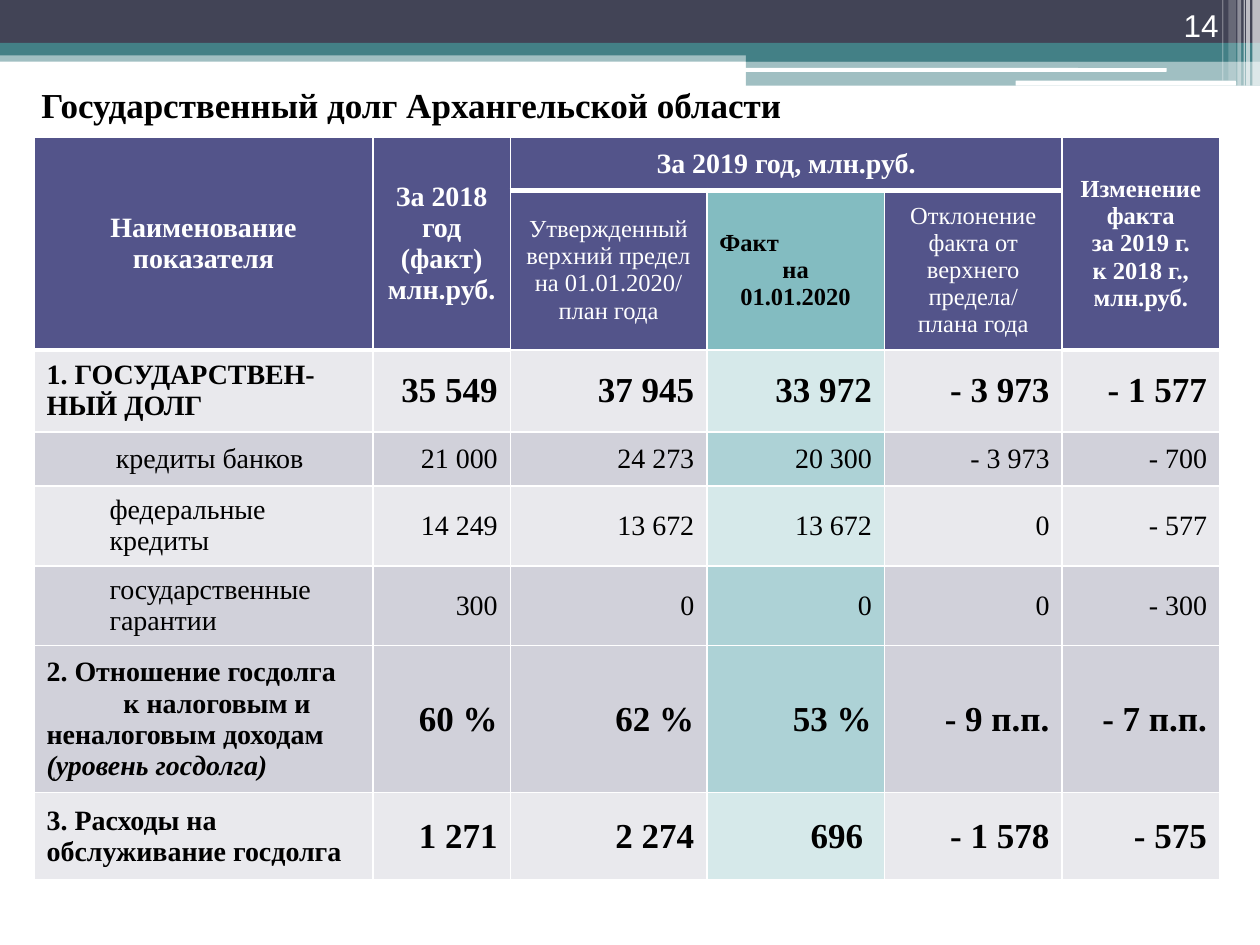
from lxml import etree
from pptx import Presentation
from pptx.dml.color import RGBColor
from pptx.enum.shapes import MSO_SHAPE
from pptx.enum.text import MSO_ANCHOR, PP_ALIGN
from pptx.oxml.ns import qn
from pptx.util import Inches, Pt

RECT, ROUNDED = MSO_SHAPE.RECTANGLE, MSO_SHAPE.ROUNDED_RECTANGLE
LEFT, CENTER, RIGHT = PP_ALIGN.LEFT, PP_ALIGN.CENTER, PP_ALIGN.RIGHT
MIDDLE, BOTTOM = MSO_ANCHOR.MIDDLE, MSO_ANCHOR.BOTTOM

GRID_COLUMNS, GRID_ROWS = 100, 75
WHITE, BLACK, SLATE, TEAL, VIOLET = "FFFFFF", "000000", "424456", "438086", "53548A"
FACT_HEADER = "83BCC1"
LIGHT_BAND, DARK_BAND = ("E9E9ED", "D6E9EA"), ("D1D1DA", "ADD2D6")
SERIF, SANS = "Times New Roman", "Arial"
FACT_COLUMN = 3


def rgb(color):
    return RGBColor.from_string(color)


class SlideBuilder:
    def __init__(self, deck):
        self.slide = deck.slides.add_slide(deck.slide_layouts[6])
        self.column = deck.slide_width / GRID_COLUMNS
        self.row = deck.slide_height / GRID_ROWS

    def place(self, left, top, width, height):
        return (round(left * self.column), round(top * self.row),
                round(width * self.column), round(height * self.row))

    def bar(self, left, top, width, height, color, opacity=100, kind=RECT):
        bar = self.slide.shapes.add_shape(kind, *self.place(left, top, width, height))
        bar.shadow.inherit = False
        bar.line.fill.background()
        bar.fill.solid()
        bar.fill.fore_color.rgb = rgb(color)
        if opacity < 100:
            tint = bar.element.spPr.find(".//" + qn("a:srgbClr"))
            etree.SubElement(tint, qn("a:alpha")).set("val", str(opacity * 1000))

    def set_text(self, frame, text, size, color, bold=False, align=LEFT, font=SERIF):
        frame.word_wrap = True
        frame.text = text
        for paragraph in frame.paragraphs:
            paragraph.alignment = align
            paragraph.font.name = font
            paragraph.font.size = Pt(size)
            paragraph.font.bold = bold
            paragraph.font.color.rgb = rgb(color)

    def label(self, left, top, width, height, text, size, color, anchor, **style):
        box = self.slide.shapes.add_textbox(*self.place(left, top, width, height))
        box.text_frame.vertical_anchor = anchor
        self.set_text(box.text_frame, text, size, color, **style)

    def table(self, left, top, widths, heights):
        frame = self.slide.shapes.add_table(
            len(heights), len(widths), *self.place(left, top, sum(widths), sum(heights)))
        grid = frame.table
        grid.first_row = grid.horz_banding = False
        for column, width in zip(grid.columns, widths):
            column.width = round(width * self.column)
        for row, height in zip(grid.rows, heights):
            row.height = round(height * self.row)
        return grid

    def cell(self, cell, fill, top_edge=1, bottom_edge=1):
        properties = cell._tc.get_or_add_tcPr()
        for side, width in (("L", 1), ("R", 1), ("T", top_edge), ("B", bottom_edge)):
            edge = etree.SubElement(properties, qn(f"a:ln{side}"), w=str(Pt(width)))
            solid = etree.SubElement(edge, qn("a:solidFill"))
            etree.SubElement(solid, qn("a:srgbClr"), val=WHITE)
        cell.fill.solid()
        cell.fill.fore_color.rgb = rgb(fill)
        cell.vertical_anchor = MIDDLE

    def indent(self, paragraph, columns):
        margin = round(columns * self.column)
        properties = paragraph._p.get_or_add_pPr()
        properties.set("marL", str(margin))
        properties.set("indent", "0")


BARS = [
    (0, 4, 100, 0.9, TEAL, 50),
    (0, 0, 100, 3.4, SLATE),
    (0, 3.4, 100, 1, TEAL),
    (59.2, 3.9, 40.8, 1, TEAL),
    (59.2, 4.8, 40.8, 2, TEAL, 50),
    (59.1, 5.4, 33.5, 0.3, WHITE, 100, ROUNDED),
    (80.6, 6.4, 17.5, 0.4, WHITE, 100, ROUNDED),
]
STRIPES = [
    (99.4, 0.6, 6.8, 65), (98.9, 0.3, 6.8, 65), (98.7, 0.1, 6.8, 60),
    (98.2, 0.3, 6.8, 40), (97.5, 0.6, 6.4, 20), (97, 0.1, 6.4, 30),
]

COLUMN_WIDTHS = [26.9, 10.9, 15.6, 14.1, 14.1, 12.5]
ROW_HEIGHTS = [4.2, 12.2, 6.5, 4.3, 5.1, 5, 11, 6.9]
HEADERS = [
    (0, 0, "Наименование показателя", 16, True),
    (0, 1, "За 2018 год (факт)\nмлн.руб.", 16, True),
    (0, 2, "За 2019 год, млн.руб.", 16, True),
    (0, 5, "Изменение факта\nза 2019 г.\nк 2018 г.,\nмлн.руб.", 14, True),
    (1, 2, "Утвержденный верхний предел на 01.01.2020/\nплан года", 14, False),
    (1, 3, "Факт\nна\n01.01.2020", 14, True),
    (1, 4, "Отклонение факта от верхнего предела/ плана года", 14, False),
]
MERGES = [(0, 0, 1, 0), (0, 1, 1, 1), (0, 2, 0, 4), (0, 5, 1, 5)]
INDICATORS = [
    ("1. ГОСУДАРСТВЕН-НЫЙ ДОЛГ", True, LIGHT_BAND,
     ["35 549", "37 945", "33 972", "- 3 973", "- 1 577"]),
    ("кредиты банков", False, DARK_BAND,
     ["21 000", "24 273", "20 300", "- 3 973", "- 700"]),
    ("федеральные кредиты", False, LIGHT_BAND,
     ["14 249", "13 672", "13 672", "0", "- 577"]),
    ("государственные гарантии", False, DARK_BAND,
     ["300", "0", "0", "0", "- 300"]),
    ("2. Отношение госдолга\nк налоговым и\nненалоговым доходам ", True, DARK_BAND,
     ["60 %", "62 %", "53 %", "- 9 п.п.", "- 7 п.п."]),
    ("3. Расходы на обслуживание госдолга", True, LIGHT_BAND,
     ["1 271", "2 274", "696 ", "- 1 578", "- 575"]),
]


def add_debt_table(builder):
    debt = builder.table(2.7, 10.9, COLUMN_WIDTHS, ROW_HEIGHTS)
    year_columns = range(2, 5)
    for row in range(2):
        for column in range(len(COLUMN_WIDTHS)):
            in_year = column in year_columns
            fill = FACT_HEADER if (row, column) == (1, FACT_COLUMN) else VIOLET
            builder.cell(debt.cell(row, column), fill,
                         top_edge=3 if row and in_year else 1,
                         bottom_edge=1 if row and in_year else 3)
    for top, left, bottom, right in MERGES:
        debt.cell(top, left).merge(debt.cell(bottom, right))
    for row, column, text, size, bold in HEADERS:
        color = BLACK if (row, column) == (1, FACT_COLUMN) else WHITE
        builder.set_text(debt.cell(row, column).text_frame, text, size, color, bold, CENTER)
    debt.cell(1, FACT_COLUMN).text_frame.paragraphs[0].alignment = LEFT

    for row, (name, is_total, (band, fact_band), amounts) in enumerate(INDICATORS, 2):
        for column, text in enumerate([name] + amounts):
            cell = debt.cell(row, column)
            under_header = row == 2 and column not in year_columns
            builder.cell(cell, fact_band if column == FACT_COLUMN else band,
                         top_edge=3 if under_header else 1)
            builder.set_text(cell.text_frame, text, 20 if is_total and column else 16,
                             BLACK, is_total, RIGHT if column else LEFT)
        if not is_total:
            item = debt.cell(row, 0).text_frame.paragraphs[0]
            item.level = 1
            builder.indent(item, 5.5 if row == 3 else 5)

    ratio = debt.cell(6, 0).text_frame.paragraphs
    builder.indent(ratio[1], 6.1)
    debt_level = ratio[2].add_run()
    debt_level.text = "(уровень госдолга)"
    debt_level.font.italic = True


def main():
    deck = Presentation()
    deck.slide_width, deck.slide_height = Inches(10), Inches(7.5)
    builder = SlideBuilder(deck)
    for bar in BARS:
        builder.bar(*bar)
    for left, width, height, opacity in STRIPES:
        builder.bar(left, 0, width, height, WHITE, opacity)
    builder.label(2.3, 6.2, 91.3, 4.2, "Государственный долг Архангельской области",
                  20, BLACK, MIDDLE, bold=True)
    add_debt_table(builder)
    builder.label(89.4, 0, 8.3, 4, "14", 18, WHITE, BOTTOM, align=RIGHT, font=SANS)
    deck.save("out.pptx")


if __name__ == "__main__":
    main()
